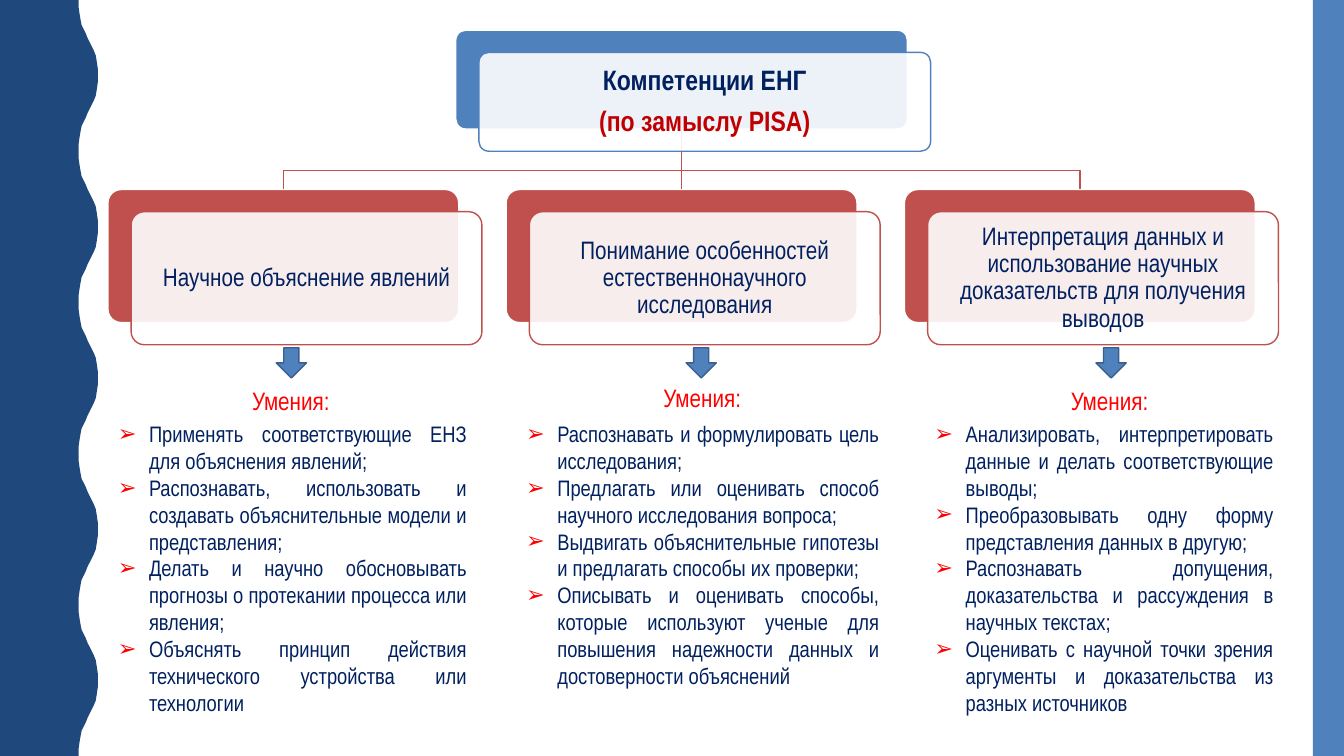
import pptx
import pptx.util
import pptx.dml.color
import pptx.enum.shapes
import pptx.enum.text
import pptx.oxml
import pptx.oxml.ns
import lxml.etree

Inches = pptx.util.Inches
Shapes = pptx.enum.shapes.MSO_SHAPE
Align = pptx.enum.text.PP_ALIGN
Anchor = pptx.enum.text.MSO_ANCHOR

FONT = "Arial Narrow"
NAVY, BLUE, RED, WHITE = "1F497D", "4F81BD", "C0504D", "FFFFFF"
INK, ACCENT, BRIGHT, ARROW_EDGE = "002060", "C00000", "FF0000", "3A5F8C"

TITLE = [("Компетенции ЕНГ", INK), ("(по замыслу PISA)", ACCENT)]
SKILLS_LABEL = "Умения:"
COLUMNS = [
    {
        "competence": "Научное объяснение явлений",
        "label_at": (2.06, 3.77),
        "skills_width": 3.66,
        "skills": [
            "Применять соответствующие ЕНЗ для объяснения явлений;",
            "Распознавать, использовать и создавать объяснительные модели и представления;",
            "Делать и научно обосновывать прогнозы о протекании процесса или явления;",
            "Объяснять принцип действия технического устройства или технологии",
        ],
    },
    {
        "competence": "Понимание особенностей естественнонаучного исследования",
        "label_at": (6.14, 3.74),
        "skills_width": 3.7,
        "skills": [
            "Распознавать и формулировать цель исследования;",
            "Предлагать или оценивать способ научного исследования вопроса;",
            "Выдвигать объяснительные гипотезы и предлагать способы их проверки;",
            "Описывать и оценивать способы, которые используют ученые для повышения надежности данных и достоверности объяснений",
        ],
    },
    {
        "competence": "Интерпретация данных и использование научных доказательств для получения выводов",
        "label_at": (10.18, 3.77),
        "skills_width": 3.56,
        "skills": [
            "Анализировать, интерпретировать данные и делать соответствующие выводы;",
            "Преобразовывать одну форму представления данных в другую;",
            "Распознавать допущения, доказательства и рассуждения в научных текстах;",
            "Оценивать с научной точки зрения аргументы и доказательства из разных источников",
        ],
    },
]

PARENT = (4.52, 0.3, 4.48, 0.98)
CHILD = (1.07, 1.88, 3.48, 1.32)
CHILD_PITCH, SKILLS_PITCH, ARROW_PITCH = 3.95, 4.05, 4.065
CARD_SHIFT = (0.23, 0.22)
BUS_Y = 1.69
WAVE_PERIOD = 1.5
HALF_WAVE = [
    (0.78, 0), (0.78, 0.07), (0.79, 0.14), (0.8, 0.2), (0.81, 0.25),
    (0.83, 0.29), (0.85, 0.33), (0.87, 0.38), (0.89, 0.42), (0.91, 0.46),
    (0.93, 0.5), (0.95, 0.55), (0.96, 0.61), (0.97, 0.68), (0.97, 0.75),
]

deck = pptx.Presentation()
deck.slide_width, deck.slide_height = Inches(13.33), Inches(7.5)
page = deck.slides.add_slide(deck.slide_layouts[6])


def color(target, value):
    target.rgb = pptx.dml.color.RGBColor.from_string(value)


def paint(shape, fill=None, line=None, alpha=None):
    shape.shadow.inherit = False
    if fill:
        shape.fill.solid()
        color(shape.fill.fore_color, fill)
    else:
        shape.fill.background()
    if alpha:
        tint = shape.fill._xPr.find(".//" + pptx.oxml.ns.qn("a:srgbClr"))
        lxml.etree.SubElement(tint, pptx.oxml.ns.qn("a:alpha"), val=str(alpha * 1000))
    if line:
        color(shape.line.color, line)
        shape.line.width = pptx.util.Pt(1)
    else:
        shape.line.fill.background()
    return shape


def preset(kind, at, **look):
    return paint(page.shapes.add_shape(kind, *map(Inches, at)), **look)


def outline(points, close, **look):
    start, *rest = [(Inches(x), Inches(y)) for x, y in points]
    builder = page.shapes.build_freeform(*start)
    builder.add_line_segments(rest, close=close)
    return paint(builder.convert_to_shape(), **look)


def rounded(at, **look):
    box = preset(Shapes.ROUNDED_RECTANGLE, at, **look)
    box.adjustments[0] = 0.1
    return box


def write(box, lines, size, frame_format, para_format, bold=False, bullet=False):
    frame = box.text_frame
    for name, value in {"word_wrap": True, **frame_format}.items():
        setattr(frame, name, value)
    for index, (words, ink) in enumerate(lines):
        para = frame.add_paragraph() if index else frame.paragraphs[0]
        for name, value in para_format.items():
            setattr(para, name, value)
        span = para.add_run()
        span.text = words
        font = {"name": FONT, "size": pptx.util.Pt(size), "bold": bold}
        for name, value in font.items():
            setattr(span.font, name, value)
        color(span.font.color, ink)
        if bullet:
            add_bullet(para)


def add_bullet(para):
    props = para._p.get_or_add_pPr()
    props.set("marL", str(Inches(0.31)))
    props.set("indent", str(-Inches(0.31)))
    tag = pptx.oxml.ns.qn
    tint = lxml.etree.SubElement(props, tag("a:buClr"))
    lxml.etree.SubElement(tint, tag("a:srgbClr"), val=BRIGHT)
    lxml.etree.SubElement(props, tag("a:buFont"), typeface="Arial")
    lxml.etree.SubElement(props, tag("a:buChar"), char="➢")


def card(at, lines, size, line, bold=False):
    left, top, width, height = at
    box = rounded((left + CARD_SHIFT[0], top + CARD_SHIFT[1], width, height),
                  fill=WHITE, line=line, alpha=90)
    inset = Inches(0.08)
    frame_format = {"vertical_anchor": Anchor.MIDDLE}
    for side in ("left", "top", "right", "bottom"):
        frame_format["margin_" + side] = inset
    write(box, lines, size, frame_format,
          {"alignment": Align.CENTER, "line_spacing": 0.9,
           "space_after": pptx.util.Pt(0.4 * size)}, bold)


def text_box(at, lines, size, alignment, bullet=False):
    box = page.shapes.add_textbox(*map(Inches, at))
    write(box, lines, size,
          {"auto_size": pptx.enum.text.MSO_AUTO_SIZE.SHAPE_TO_FIT_TEXT},
          {"alignment": alignment}, bullet=bullet)


wave = [(0, 0)]
for number in range(5):
    base = number * WAVE_PERIOD
    wave += [(x, base + y) for x, y in HALF_WAVE]
    wave += [(x, base + WAVE_PERIOD - y) for x, y in reversed(HALF_WAVE[:-1])]
outline(wave + [(0, 7.5)], True, fill=NAVY)
preset(Shapes.RECTANGLE, (13.02, 0, 0.31, 7.5), fill=BLUE)

child_places = [(CHILD[0] + CHILD_PITCH * i, *CHILD[1:]) for i in range(len(COLUMNS))]
parent_back = rounded(PARENT, fill=BLUE, line=WHITE)
child_backs = [rounded(at, fill=RED, line=WHITE) for at in child_places]

trunk_x, trunk_top = PARENT[0] + PARENT[2] / 2, PARENT[1] + PARENT[3]
for at in (child_places[0], child_places[-1]):
    branch_x = at[0] + at[2] / 2
    outline([(trunk_x, trunk_top), (trunk_x, BUS_Y), (branch_x, BUS_Y), (branch_x, at[1])],
            False, line=RED)
trunk = page.shapes.add_connector(pptx.enum.shapes.MSO_CONNECTOR.STRAIGHT, 0, 0, 0, 0)
trunk.begin_connect(parent_back, 2)
trunk.end_connect(child_backs[1], 0)
color(trunk.line.color, RED)
trunk.line.width = pptx.util.Pt(1)
lxml.etree.SubElement(trunk._element.spPr, pptx.oxml.ns.qn("a:effectLst"))

card(PARENT, TITLE, 20, BLUE, bold=True)
for index, (column, at) in enumerate(zip(COLUMNS, child_places)):
    card(at, [(column["competence"], INK)], 18, RED)
    preset(Shapes.DOWN_ARROW, (2.74 + ARROW_PITCH * index, 3.45, 0.3, 0.3),
           fill=BLUE, line=ARROW_EDGE)
    text_box((*column["label_at"], 1.65, 0.4), [(SKILLS_LABEL, BRIGHT)], 18, Align.CENTER)
    text_box((CHILD[0] + SKILLS_PITCH * index, 4.12, column["skills_width"], 3.06),
             [(skill, INK) for skill in column["skills"]], 16, Align.JUSTIFY, bullet=True)

deck.save("out.pptx")
